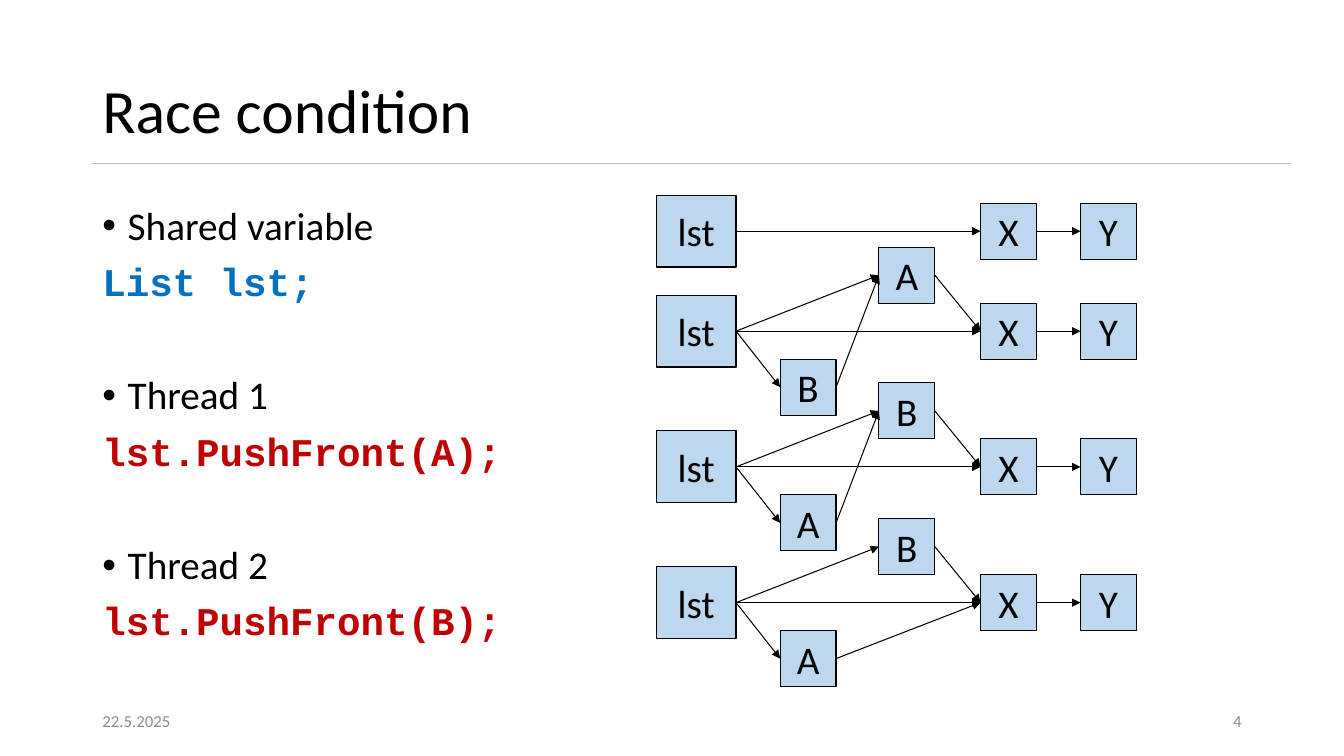
from collections import namedtuple
from dataclasses import dataclass

from lxml.etree import SubElement
from pptx import Presentation
from pptx.dml.color import RGBColor
from pptx.enum.shapes import MSO_CONNECTOR, MSO_SHAPE
from pptx.enum.text import MSO_ANCHOR, PP_ALIGN
from pptx.oxml.ns import qn
from pptx.util import Cm, Pt

Box = namedtuple("Box", "left top width height")


@dataclass(frozen=True)
class Theme:
    text: str = "000000"
    muted: str = "8C8C8C"
    rule: str = "BFBFBF"
    node: str = "BDD7EE"
    declaration: str = "0070C0"
    call: str = "C00000"
    body_font: str = "Calibri"
    code_font: str = "Courier New"
    title_size: int = 44
    body_size: int = 28
    footer_size: int = 12
    line_width: float = 0.75


THEME = Theme()
RIGHT, LEFT = 3, 1
NODE_SIDE = 1.41
LIST_WIDTH, LIST_HEIGHT = 2.01, 1.81
# Left edges of the nodes, measured from the left of the diagram
LOW_X, HIGH_X, X_X, Y_X = 3.12, 5.61, 8.17, 10.69


def color(value):
    return RGBColor.from_string(value)


def add_run(paragraph, text, size, ink=THEME.text, font=THEME.body_font, bold=False):
    run = paragraph.add_run()
    run.text = text
    run.font.name = font
    run.font.size = Pt(size)
    run.font.bold = bold
    run.font.color.rgb = color(ink)


def add_text_box(slide, box, anchor=MSO_ANCHOR.MIDDLE):
    frame = slide.shapes.add_textbox(*map(Cm, box)).text_frame
    frame.word_wrap = True
    frame.vertical_anchor = anchor
    return frame


def add_line(slide, start, end, ink=THEME.text):
    line = slide.shapes.add_connector(MSO_CONNECTOR.STRAIGHT, *map(Cm, start + end))
    line.line.color.rgb = color(ink)
    line.line.width = Pt(THEME.line_width)
    SubElement(line._element.spPr, qn("a:effectLst"))
    return line


def add_arrow(slide, source, target):
    """Point from the right side of source to the left side of target."""
    arrow = add_line(slide, (0, 0), (0, 0))
    arrow.begin_connect(source, RIGHT)
    arrow.end_connect(target, LEFT)
    tail = arrow.line._get_or_add_ln()
    SubElement(tail, qn("a:tailEnd"), type="triangle")


def add_node(slide, label, left, middle, width=NODE_SIDE, height=NODE_SIDE):
    node = slide.shapes.add_shape(
        MSO_SHAPE.RECTANGLE, Cm(left), Cm(middle - height / 2), Cm(width), Cm(height))
    node.shadow.inherit = False
    node.fill.solid()
    node.fill.fore_color.rgb = color(THEME.node)
    node.line.color.rgb = color(THEME.text)
    node.line.width = Pt(THEME.line_width)
    frame = node.text_frame
    frame.word_wrap = False
    frame.vertical_anchor = MSO_ANCHOR.MIDDLE
    paragraph = frame.paragraphs[0]
    paragraph.alignment = PP_ALIGN.CENTER
    add_run(paragraph, label, THEME.body_size)
    return node


def add_title(slide, box):
    paragraph = add_text_box(slide, box).paragraphs[0]
    paragraph.line_spacing = 0.9
    add_run(paragraph, "Race condition", THEME.title_size)
    rule_y = box.top + 3.1
    add_line(slide, (box.left, rule_y), (box.left + 30.2, rule_y), THEME.rule)


def add_code_steps(slide, box):
    """List each heading as a bullet with its line of code below."""
    steps = [
        ("Shared variable", "List lst;", THEME.declaration),
        ("Thread 1", "lst.PushFront(A);", THEME.call),
        ("Thread 2", "lst.PushFront(B);", THEME.call),
    ]
    frame = add_text_box(slide, box, MSO_ANCHOR.TOP)
    for index, (heading, code, ink) in enumerate(steps):
        bullet = frame.add_paragraph() if index else frame.paragraphs[0]
        properties = bullet._p.get_or_add_pPr()
        properties.set("marL", str(Cm(0.64)))
        properties.set("indent", str(-Cm(0.64)))
        SubElement(properties, qn("a:buFont"), typeface="Arial")
        SubElement(properties, qn("a:buChar"), char="•")
        bullet.line_spacing = 0.9
        bullet.space_before = Pt(50.8 if index else 0)
        add_run(bullet, heading, THEME.body_size)

        code_line = frame.add_paragraph()
        code_line.line_spacing = 0.9
        code_line.space_before = Pt(10)
        add_run(code_line, code, THEME.body_size, ink, THEME.code_font, bold=True)


def add_list_state(slide, left, middle, high=None, low=None, low_joins_high=True):
    """Draw one state of the list, with up to two nodes being pushed."""
    head = add_node(slide, "lst", left, middle, LIST_WIDTH, LIST_HEIGHT)
    first = add_node(slide, "X", left + X_X, middle)
    second = add_node(slide, "Y", left + Y_X, middle)
    arrows = [(head, first), (first, second)]
    if high and low:
        low_node = add_node(slide, low, left + LOW_X, middle + NODE_SIDE)
        high_node = add_node(slide, high, left + HIGH_X, middle - NODE_SIDE)
        arrows += [(head, low_node), (head, high_node), (high_node, first),
                   (low_node, high_node if low_joins_high else first)]
    for source, target in arrows:
        add_arrow(slide, source, target)


def add_list_diagram(slide, box):
    first_middle = box.top + LIST_HEIGHT / 2
    add_list_state(slide, box.left, first_middle)
    pushes = [("A", "B", True), ("B", "A", True), ("B", "A", False)]
    for index, push in enumerate(pushes):
        add_list_state(slide, box.left, first_middle + 2.52 + index * 3.42, *push)


def add_footer(slide, box):
    width = 7.62
    entries = [
        ("22.5.2025", box.left, PP_ALIGN.LEFT),
        ("4", box.left + box.width - width, PP_ALIGN.RIGHT),
    ]
    for text, left, alignment in entries:
        frame = add_text_box(slide, Box(left, box.top, width, box.height))
        paragraph = frame.paragraphs[0]
        paragraph.alignment = alignment
        add_run(paragraph, text, THEME.footer_size, THEME.muted)


def main():
    presentation = Presentation()
    presentation.slide_width = Cm(33.87)
    presentation.slide_height = Cm(19.05)
    slide = presentation.slides.add_slide(presentation.slide_layouts[6])
    add_title(slide, Box(2.33, 1.01, 27, 3.68))
    add_code_steps(slide, Box(2.33, 5.07, 14.4, 12.09))
    add_list_diagram(slide, Box(16.54, 4.92, 12.1, 12.4))
    add_footer(slide, Box(2.33, 17.66, 29.21, 1.01))
    presentation.save("out.pptx")


if __name__ == "__main__":
    main()
